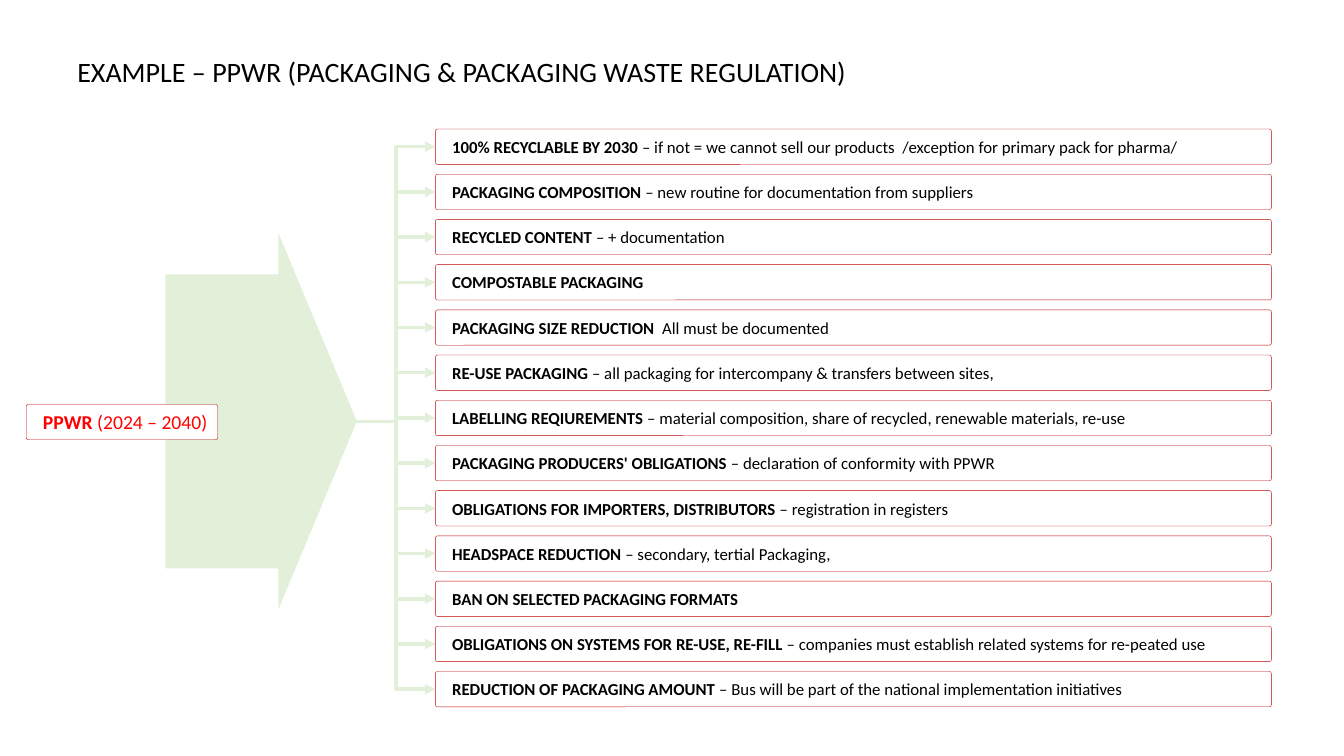
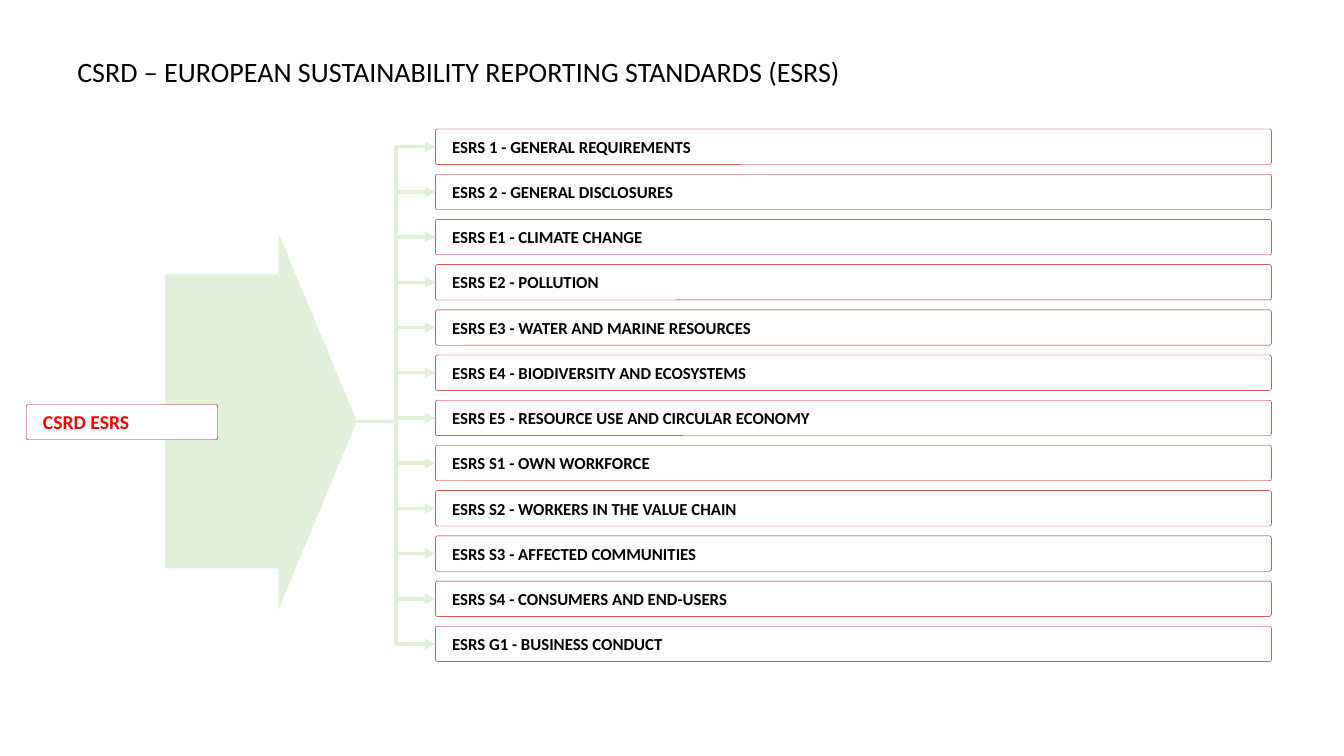
from lxml.etree import SubElement
from pptx import Presentation
from pptx.dml.color import RGBColor
from pptx.enum.shapes import MSO_CONNECTOR, MSO_SHAPE
from pptx.enum.text import MSO_ANCHOR, PP_ALIGN
from pptx.oxml.ns import qn
from pptx.util import Inches, Pt

BLACK = RGBColor(0x00, 0x00, 0x00)
WHITE = RGBColor(0xFF, 0xFF, 0xFF)
GREEN = RGBColor(0xE2, 0xF0, 0xD9)
RED = RGBColor(0xFF, 0x00, 0x00)
BORDER = RGBColor(0xC0, 0x00, 0x00)
FONT = "Calibri"

WIDE, HIGH = Inches(13.33), Inches(7.5)
TOP, STEP, ROW = HIGH * 0.1707, HIGH * 0.0598, HIGH * 0.0467
LEFT, SPAN = WIDE * 0.324, WIDE * 0.622

DECK = [
    (
        "EXAMPLE – PPWR (PACKAGING & PACKAGING WASTE REGULATION)",
        ["PPWR", " (2024 – 2040)"],
        [
            ["100% RECYCLABLE BY 2030",
             " – if not = we cannot sell our products  /exception for primary pack for pharma/"],
            ["PACKAGING COMPOSITION ", "– new routine for documentation from suppliers"],
            ["RECYCLED CONTENT ", "– + documentation"],
            ["COMPOSTABLE PACKAGING"],
            ["PACKAGING SIZE REDUCTION ", " All must be documented"],
            ["RE-USE PACKAGING", " – all packaging for intercompany & transfers between sites,"],
            ["LABELLING REQIUREMENTS ",
             "– material composition, share of recycled, renewable materials, re-use"],
            ["PACKAGING PRODUCERS' OBLIGATIONS", " – declaration of conformity with PPWR"],
            ["OBLIGATIONS FOR IMPORTERS, DISTRIBUTORS", " – registration in registers"],
            ["HEADSPACE REDUCTION ", "– secondary, tertial Packaging,"],
            ["BAN ON SELECTED PACKAGING FORMATS"],
            ["OBLIGATIONS ON SYSTEMS FOR RE-USE, RE-FILL",
             " – companies must establish related systems for re-peated use"],
            ["REDUCTION OF PACKAGING AMOUNT ",
             "– Bus will be part of the national implementation initiatives"],
        ],
    ),
    (
        "CSRD – EUROPEAN SUSTAINABILITY REPORTING STANDARDS (ESRS)",
        ["CSRD ESRS"],
        [
            ["ESRS 1 - GENERAL REQUIREMENTS"],
            ["ESRS 2 - GENERAL DISCLOSURES"],
            ["ESRS E1 - CLIMATE CHANGE"],
            ["ESRS E2 - POLLUTION"],
            ["ESRS E3 - WATER AND MARINE RESOURCES"],
            ["ESRS E4 - BIODIVERSITY AND ECOSYSTEMS"],
            ["ESRS E5 - RESOURCE USE AND CIRCULAR ECONOMY"],
            ["ESRS S1 - OWN WORKFORCE"],
            ["ESRS S2 - WORKERS IN THE VALUE CHAIN"],
            ["ESRS S3 - AFFECTED COMMUNITIES"],
            ["ESRS S4 - CONSUMERS AND END-USERS"],
            ["ESRS G1 - BUSINESS CONDUCT"],
        ],
    ),
]


def write(para, text, size, color, bold):
    run = para.add_run()
    run.text = text
    run.font.name = FONT
    run.font.size = Pt(size)
    run.font.bold = bold
    run.font.color.rgb = color


def add_box(slide, left, top, width, parts, size, color):
    box = slide.shapes.add_shape(
        MSO_SHAPE.ROUNDED_RECTANGLE, int(left), int(top), int(width), int(ROW))
    box.adjustments[0] = 0.06
    box.shadow.inherit = False
    box.fill.background()
    box.line.color.rgb = BORDER
    box.line.width = Pt(0.25)
    frame = box.text_frame
    frame.vertical_anchor = MSO_ANCHOR.MIDDLE
    frame.margin_left, frame.margin_right = Inches(0.16), 0
    para = frame.paragraphs[0]
    para.alignment = PP_ALIGN.LEFT
    for spot, part in enumerate(parts):
        write(para, part, size, color, spot == 0)
    return box


deck = Presentation()
deck.slide_width, deck.slide_height = WIDE, HIGH
layout = deck.slide_layouts.get_by_name("Title Only")
head = layout.placeholders[0]
head.left, head.top = int(WIDE * 0.05), int(HIGH * 0.045)
head.width, head.height = int(WIDE * 0.886), int(HIGH * 0.105)
head.text_frame.vertical_anchor = MSO_ANCHOR.MIDDLE

for title, label, items in DECK:
    slide = deck.slides.add_slide(layout)
    para = slide.shapes.title.text_frame.paragraphs[0]
    para.alignment = PP_ALIGN.LEFT
    para.line_spacing = 0.9
    write(para, title, 20, BLACK, False)

    arrow = slide.shapes.add_shape(
        MSO_SHAPE.RIGHT_ARROW, int(WIDE * 0.123), int(HIGH * 0.308),
        int(WIDE * 0.1425), int(HIGH * 0.4987))
    arrow.adjustments[0], arrow.adjustments[1] = 0.78, 0.41
    arrow.shadow.inherit = False
    arrow.fill.solid()
    arrow.fill.fore_color.rgb = GREEN
    arrow.line.fill.background()

    for row, parts in enumerate(items):
        box = add_box(slide, LEFT, TOP + row * STEP, SPAN, parts, 12, BLACK)
        link = slide.shapes.add_connector(MSO_CONNECTOR.ELBOW, 0, 0, 0, 0)
        link.begin_connect(arrow, 3)
        link.end_connect(box, 1)
        link.line.color.rgb = GREEN
        link.line.width = Pt(2.5)
        props = link._element.spPr
        SubElement(props.find(qn("a:ln")), qn("a:tailEnd"), type="triangle")
        SubElement(props, qn("a:effectLst"))

    tag = add_box(slide, WIDE * 0.0195, HIGH * 0.535, WIDE * 0.1425, label, 14, RED)
    tag.fill.solid()
    tag.fill.fore_color.rgb = WHITE

deck.save("out.pptx")
